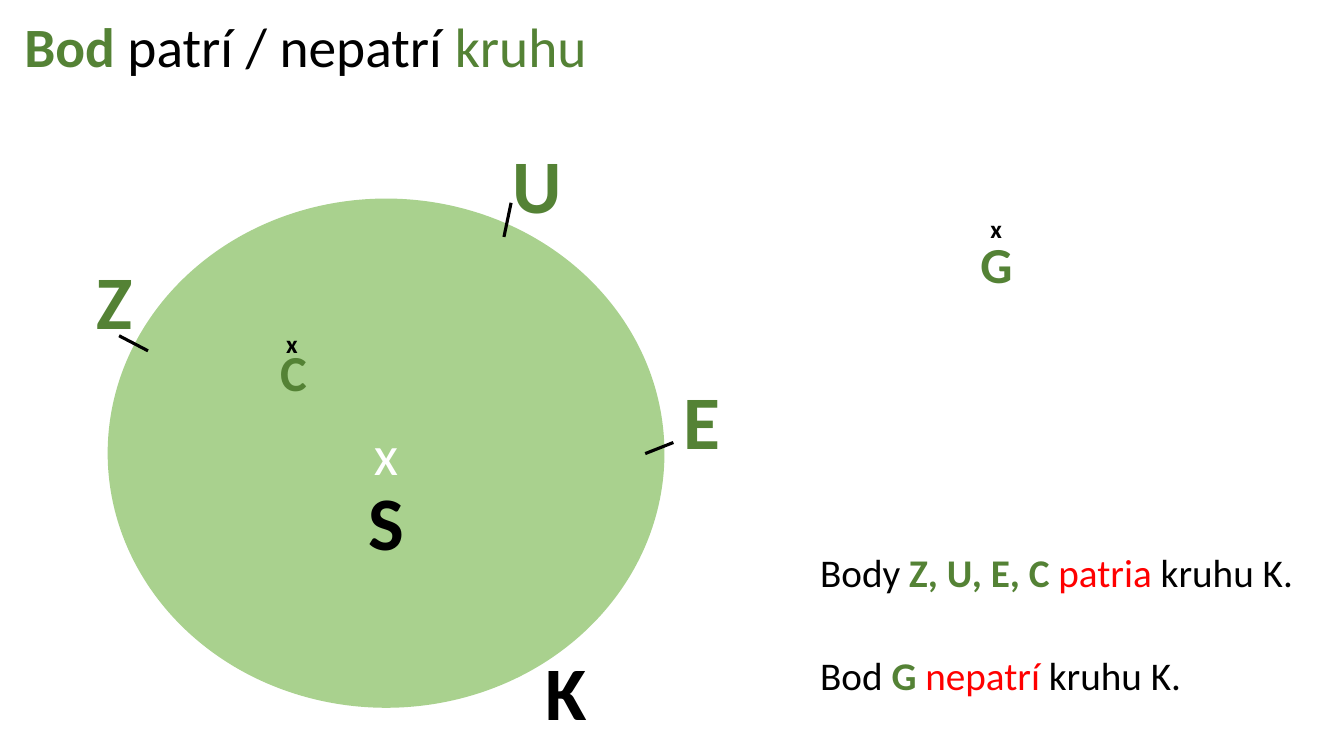
"""Build a slide about points that belong or do not belong to a disc."""
from pptx import Presentation
from pptx.dml.color import RGBColor
from pptx.enum.shapes import MSO_CONNECTOR, MSO_SHAPE
from pptx.enum.text import MSO_ANCHOR, MSO_AUTO_SIZE, PP_ALIGN
from pptx.util import Cm, Pt
from pptx.oxml import parse_xml
from pptx.oxml.ns import nsdecls

FONT = "Calibri"
GREEN, LIGHT, BLACK, WHITE, RED = "548235", "A9D18E", "000000", "FFFFFF", "FF0000"

TITLE = [("Bod", GREEN, True), (" patrí / nepatrí ", BLACK, False), ("kruhu", GREEN, False)]
TITLE_BOX = (0.36, 0.28, 16.26, 1.93)
DISC_BOX = (2.82, 5.11, 13.82, 12.62)
LARGE, MEDIUM, SMALL = 54, 36, 18
BOX_SIZES = {LARGE: (1.35, 2.57), MEDIUM: (1.3, 1.8), SMALL: (0.81, 1.02)}
LABELS = [
    ("S", 9.04, 11.84, LARGE, BLACK),
    ("K", 13.49, 16.13, LARGE, BLACK),
    ("Z", 2.18, 6.27, LARGE, GREEN),
    ("U", 12.67, 3.35, LARGE, GREEN),
    ("E", 16.97, 9.3, LARGE, GREEN),
    ("C", 6.81, 8.46, MEDIUM, GREEN),
    ("x", 6.96, 8.15, SMALL, BLACK),
    ("G", 24.46, 5.74, MEDIUM, GREEN),
    ("x", 24.71, 5.26, SMALL, BLACK),
]
TICKS = [(3, 8.46, 3.73, 8.84), (16.26, 11.43, 16.97, 11.15), (12.88, 5.11, 12.7, 5.97)]
STATEMENTS = [
    (13.69, 12.52, [("Body ", BLACK, False), ("Z, U, E, C ", GREEN, True),
                    ("patria", RED, False), (" kruhu K.", BLACK, False)]),
    (16.28, 9.73, [("Bod ", BLACK, False), ("G ", GREEN, True),
                   ("nepatrí ", RED, False), ("kruhu K.", BLACK, False)]),
]
STATEMENT_LEFT, STATEMENT_HEIGHT = 20.42, 1.45


def color(value):
    return RGBColor.from_string(value)


def lengths(values):
    return [Cm(value) for value in values]


def add_runs(paragraph, runs, size):
    for text, tint, bold in runs:
        run = paragraph.add_run()
        run.text = text
        run.font.name = FONT
        run.font.size = Pt(size)
        run.font.bold = bold
        run.font.color.rgb = color(tint)


def add_text(slide, box, runs, size, wrap):
    frame = slide.shapes.add_textbox(*lengths(box)).text_frame
    frame.word_wrap = wrap
    frame.auto_size = MSO_AUTO_SIZE.SHAPE_TO_FIT_TEXT
    add_runs(frame.paragraphs[0], runs, size)


def add_title(slide):
    title = slide.shapes.title
    title.left, title.top, title.width, title.height = lengths(TITLE_BOX)
    frame = title.text_frame
    frame.auto_size = MSO_AUTO_SIZE.NONE
    frame.vertical_anchor = MSO_ANCHOR.MIDDLE
    paragraph = frame.paragraphs[0]
    paragraph.alignment = PP_ALIGN.LEFT
    paragraph.line_spacing = 0.9
    add_runs(paragraph, TITLE, 39.6)


def add_disc(slide):
    disc = slide.shapes.add_shape(MSO_SHAPE.OVAL, *lengths(DISC_BOX))
    disc.shadow.inherit = False
    disc.fill.solid()
    disc.fill.fore_color.rgb = color(LIGHT)
    disc.line.color.rgb = color(LIGHT)
    disc.line.width = Pt(6)
    disc.text_frame.vertical_anchor = MSO_ANCHOR.MIDDLE
    paragraph = disc.text_frame.paragraphs[0]
    paragraph.alignment = PP_ALIGN.CENTER
    add_runs(paragraph, [("x", WHITE, False)], 40)


def add_tick(slide, ends):
    tick = slide.shapes.add_connector(MSO_CONNECTOR.STRAIGHT, *lengths(ends))
    tick.line.color.rgb = color(BLACK)
    tick.line.width = Pt(2.25)
    tick._element.spPr.append(parse_xml(f"<a:effectLst {nsdecls('a')}/>"))


def main():
    presentation = Presentation()
    presentation.slide_width, presentation.slide_height = Cm(33.87), Cm(19.05)
    slide = presentation.slides.add_slide(presentation.slide_layouts[5])
    add_title(slide)
    add_disc(slide)
    for ends in TICKS:
        add_tick(slide, ends)
    for letter, left, top, size, tint in LABELS:
        add_text(slide, (left, top, *BOX_SIZES[size]), [(letter, tint, True)], size, True)
    for top, width, runs in STATEMENTS:
        add_text(slide, (STATEMENT_LEFT, top, width, STATEMENT_HEIGHT), runs, 28, False)
    presentation.save("out.pptx")


if __name__ == "__main__":
    main()
